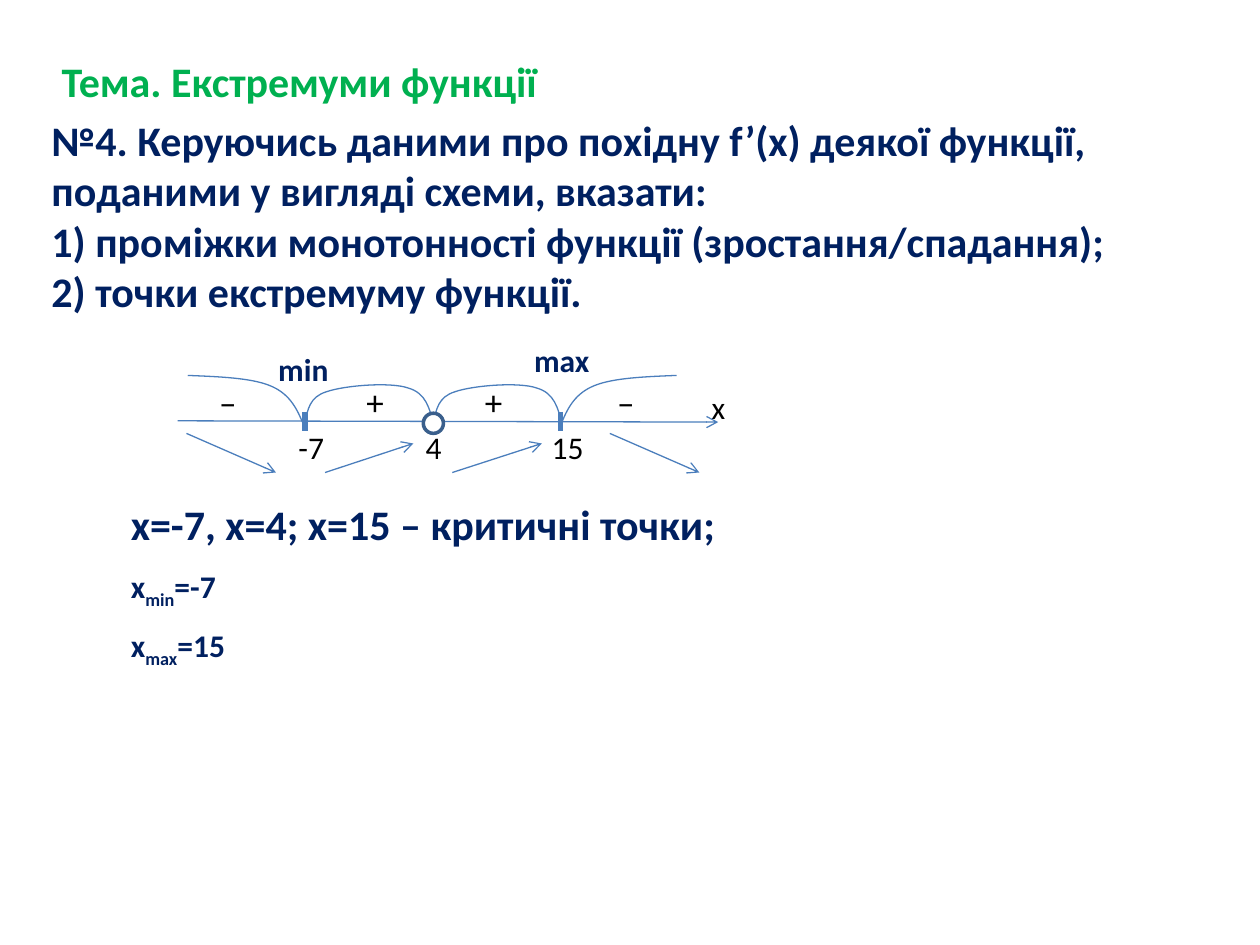
from lxml import etree
from pptx import Presentation
from pptx.dml.color import RGBColor
from pptx.enum.shapes import MSO_CONNECTOR, MSO_SHAPE
from pptx.enum.text import MSO_AUTO_SIZE
from pptx.oxml.ns import qn
from pptx.util import Pt

PX = 9144  # EMU, 100 px to the inch
STRAIGHT = MSO_CONNECTOR.STRAIGHT
OVAL = MSO_SHAPE.OVAL
FIT = MSO_AUTO_SIZE.SHAPE_TO_FIT_TEXT
NAVY, GREEN, BLACK = "002060", "00B050", "000000"
BLUE, RIM, WHITE = "4B7EBC", "3A5F8C", "FFFFFF"

TASK = [
    "№4. Керуючись даними про похідну f’(х) деякої функції, поданими у вигляді схеми, вказати:",
    "1) проміжки монотонності функції (зростання/спадання);",
    "2) точки екстремуму функції.",
]
# text, left, top, width, height, size, colour
HEADS = [
    ("Тема. Екстремуми функції", 39, 39, 461, 50, 24, GREEN),
    ("max", 414, 266, 70, 40, 18, NAVY),
    ("min", 211, 273, 70, 40, 18, NAVY),
    ("х=-7, x=4; x=15 – критичні точки;", 94, 391, 500, 50, 24, NAVY),
]
RESULTS = [("min", "=-7", 445), ("max", "=15", 492)]
SIGNS = [("–", 164), ("+", 281), ("+", 375), ("–", 480)]
LABELS = [("-7", 227, 335, 47), ("4", 328, 335, 38),
          ("15", 428, 335, 49), ("х", 555, 303, 38)]

AXIS = (141, 334, 570, 335)
TICKS = [242, 445]
TRENDS = [(148, 344, 219, 375), (258, 375, 328, 352),
          (359, 375, 430, 352), (484, 344, 555, 375)]
# Start point, then three points for each cubic curve
ARCH = [(242, 336), (244, 325), (246, 315), (259, 311),
        (273, 306), (310, 303), (324, 308),
        (338, 312), (341, 324), (344, 337)]
WING = [(149, 298), (174, 299), (199, 300), (214, 306),
        (229, 312), (235, 323), (240, 335)]
STEP = 102    # from one arch to the next
MIRROR = 686  # sum of x of the left and the right wing


def rgb(code):
    return RGBColor.from_string(code)


def style(font, size, color, bold):
    font.name, font.size, font.bold = "Calibri", Pt(size), bold
    font.color.rgb = rgb(color)


def write(lines, x, y, w, h, size, color, bold=True):
    """Add a text box; each line is a list of runs."""
    box = slide.shapes.add_textbox(x * PX, y * PX, w * PX, h * PX)
    frame = box.text_frame
    frame.word_wrap, frame.auto_size = True, FIT
    for i, runs in enumerate(lines):
        para = frame.add_paragraph() if i else frame.paragraphs[0]
        for text in runs:
            run = para.add_run()
            run.text = text
            style(run.font, size, color, bold)
    return frame.paragraphs


def rule(ends, width=0.75, arrow=False):
    line = slide.shapes.add_connector(STRAIGHT, *(v * PX for v in ends))
    line.line.color.rgb, line.line.width = rgb(BLUE), Pt(width)
    props = line.line._get_or_add_ln()
    if arrow:
        etree.SubElement(props, qn("a:tailEnd"), type="arrow")
    etree.SubElement(props.getparent(), qn("a:effectLst"))


def curve(points):
    """Draw an open outline whose points are cubic Bezier controls."""
    pen = slide.shapes.build_freeform(*points[0], scale=PX)
    pen.add_line_segments(points[1:], close=False)
    shape = pen.convert_to_shape()
    shape.shadow.inherit = False
    shape.fill.background()
    shape.line.color.rgb, shape.line.width = rgb(BLUE), Pt(0.75)
    path = next(shape._element.iter(qn("a:path")))
    legs = path.findall(qn("a:lnTo"))
    for i, leg in enumerate(legs):
        if i % 3 == 0:
            bend = etree.SubElement(path, qn("a:cubicBezTo"))
        bend.append(leg[0])
        path.remove(leg)


deck = Presentation()
deck.slide_width, deck.slide_height = 1000 * PX, 750 * PX
slide = deck.slides.add_slide(deck.slide_layouts[6])

task = write([[line] for line in TASK], 31, 86, 945, 172, 24, NAVY)
for para in task[1:]:
    props = para._p.get_or_add_pPr()
    props.set("marL", str(50 * PX))
    props.set("indent", str(-50 * PX))
for text, *place in HEADS:
    write([[text]], *place)
for sub, value, y in RESULTS:
    para = write([["x", sub, value]], 94, y, 117, 40, 18, NAVY)[0]
    para.runs[1].font._element.set("baseline", "-25000")
for sign, x in SIGNS:
    write([[sign]], x, 297, 39, 44, 20, BLACK, False)

for ends in TRENDS:
    rule(ends, arrow=True)
for shift in (0, STEP):
    curve([(x + shift, y) for x, y in ARCH])
curve(WING)
curve([(MIRROR - x, y) for x, y in WING])
rule(AXIS, arrow=True)
for x in TICKS:
    rule((x, 327, x, 342), width=3)
for text, x, y, w in LABELS:
    write([[text]], x, y, w, 40, 18, BLACK, False)

hole = slide.shapes.add_shape(OVAL, 336 * PX, 328 * PX, 16 * PX, 16 * PX)
hole.shadow.inherit = False
hole.fill.solid()
hole.fill.fore_color.rgb = rgb(WHITE)
hole.line.color.rgb, hole.line.width = rgb(RIM), Pt(2)

deck.save("out.pptx")
